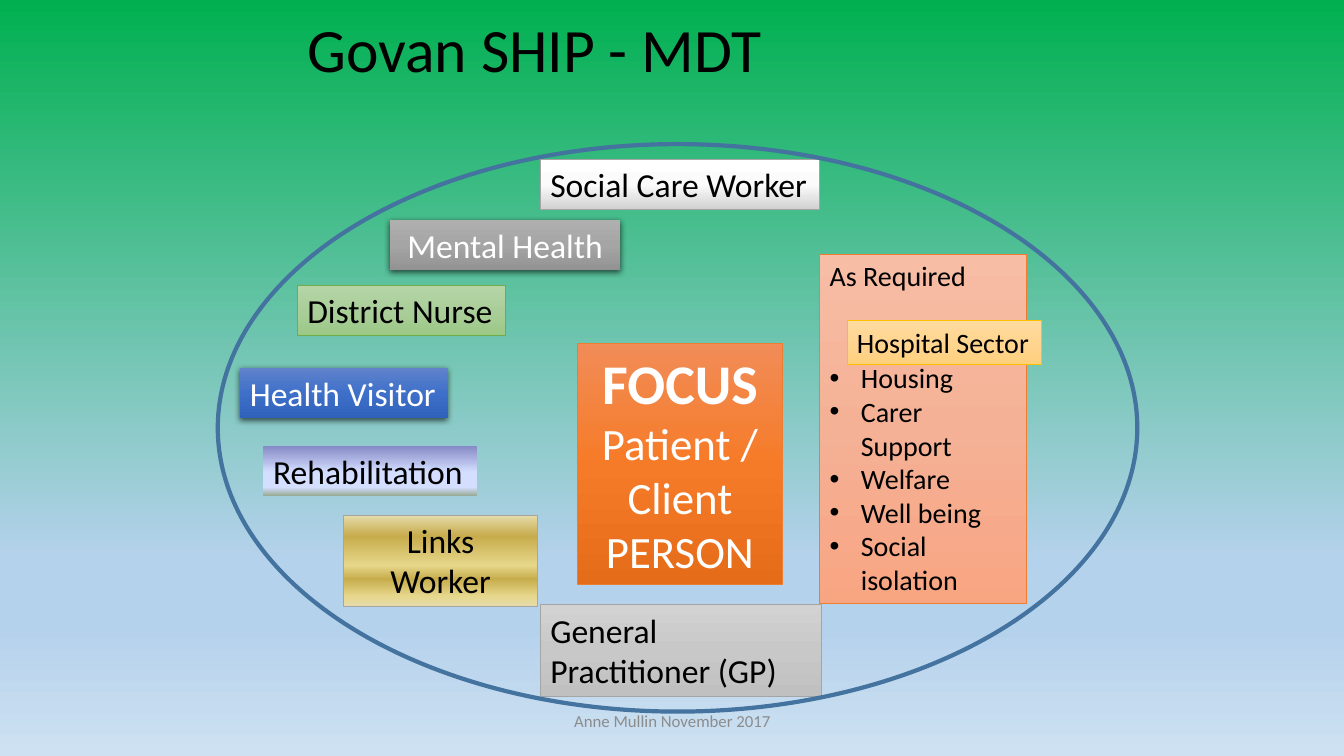
from lxml.etree import SubElement as Sub
from pptx import Presentation
from pptx.dml.color import RGBColor as RGB
from pptx.enum.shapes import MSO_SHAPE as Kind
from pptx.enum.text import MSO_ANCHOR as Anchor, MSO_AUTO_SIZE as Auto, PP_ALIGN as Align
from pptx.oxml.ns import qn
from pptx.util import Inches, Pt


class Theme:
    font = "Calibri"
    black, white, grey = "000000", "FFFFFF", "8C8C8C"
    ring, orange, edge, green, gold = "43739E", "ED7D31", "A5A5A5", "70AD47", "FFC000"
    title, focus, large, role, item, foot = 44, 40, 32, 24, 20, 12
    sky = [(0, "00B050"), (74, "B5D2EC"), (83, "B5D2EC"), (100, "CEE1F2")]
    brass = [(0, "E6DCAC"), (12, "E6D78A"), (30, "C7AC4C"),
             (45, "E6D78A"), (77, "C7AC4C"), (100, "E6DCAC")]
    lilac = [(0, "8488C4"), (53, "D4DEFF"), (83, "D4DEFF"), (100, "96AB94")]


def three(*tones):
    """Place three colours at the start, middle and end of a gradient."""
    return list(zip((0, 50, 100), tones))


def blend(fill, host, stops, angle=90):
    """Fill with a gradient of any number of stops; the angle runs clockwise."""
    fill.gradient()
    grad = host.find(".//" + qn("a:gradFill"))
    chain = grad.find(qn("a:gsLst"))
    for old in list(chain):
        chain.remove(old)
    for place, tone in stops:
        stop = Sub(chain, qn("a:gs"), pos=str(place * 1000))
        Sub(stop, qn("a:srgbClr"), val=tone)
    grad.find(qn("a:lin")).set("ang", str(angle * 60000))


def write(frame, text, size, color=Theme.black, bold=False, align=Align.LEFT,
          first=False, bullet=False, before=0, lines=None):
    """Add one paragraph; first reuses the one that the frame starts with."""
    para = frame.paragraphs[0] if first else frame.add_paragraph()
    para.alignment = align
    if bullet:
        props = para._p.get_or_add_pPr()
        props.set("marL", str(Inches(0.31)))
        props.set("indent", str(-Inches(0.31)))
        Sub(props, qn("a:buFont"), typeface="Arial")
        Sub(props, qn("a:buChar"), char="•")
    if before:
        para.space_before = Pt(before)
    if lines:
        para.line_spacing = lines
    run = para.add_run()
    run.text = text
    font = run.font
    font.name, font.size, font.bold = Theme.font, Pt(size), bold
    font.color.rgb = RGB.from_string(color)


class Board:
    def __init__(self, slide):
        self.slide, self.theme = slide, Theme
        blend(slide.background.fill, slide._element, Theme.sky)

    def label(self, spot, text, size, **style):
        frame = self.slide.shapes.add_textbox(*map(Inches, spot)).text_frame
        frame.word_wrap = True
        frame.vertical_anchor = Anchor.MIDDLE
        write(frame, text, size, first=True, **style)

    def shape(self, kind, spot, line=None, width=0.5):
        shape = self.slide.shapes.add_shape(kind, *map(Inches, spot))
        shape.shadow.inherit = False
        if line:
            shape.line.color.rgb = RGB.from_string(line)
            shape.line.width = Pt(width)
        else:
            shape.line.fill.background()
        return shape

    def ring(self, spot):
        self.shape(Kind.OVAL, spot, self.theme.ring, 3).fill.background()

    def box(self, spot, stops, line=None, angle=90, wrap=True, shade=False):
        """Draw a gradient box and return its text frame."""
        shape = self.shape(Kind.RECTANGLE, spot, line)
        blend(shape.fill, shape._element.spPr, stops, angle)
        if shade:
            self.shade(shape)
        frame = shape.text_frame
        frame.word_wrap = wrap
        frame.auto_size = Auto.SHAPE_TO_FIT_TEXT
        frame.vertical_anchor = Anchor.TOP
        return frame

    def shade(self, shape):
        effects = shape._element.spPr.find(qn("a:effectLst"))
        drop = Sub(effects, qn("a:outerShdw"), blurRad=str(Pt(4.5)), dist=str(Pt(1.5)),
                   dir="5400000", algn="ctr", rotWithShape="0")
        tone = Sub(drop, qn("a:srgbClr"), val=self.theme.black)
        Sub(tone, qn("a:alpha"), val="63000")

    def role(self, text, spot, stops, size=Theme.role, color=Theme.black,
             align=Align.LEFT, **look):
        write(self.box(spot, stops, **look), text, size, color, align=align, first=True)


def main():
    deck = Presentation()
    deck.slide_width, deck.slide_height = Inches(13.33), Inches(7.5)
    board = Board(deck.slides.add_slide(deck.slide_layouts[6]))
    mid, white, edge = Align.CENTER, Theme.white, Theme.edge

    board.label((2.95, 0, 8.72, 1.05), "Govan SHIP - MDT", Theme.title, lines=0.9)

    focus = board.box((5.73, 3.41, 2.03, 2.39),
                      three("F18C57", "F67B28", "E56C19"), Theme.orange)
    write(focus, "FOCUS", Theme.focus, white, bold=True, align=mid, first=True)
    for text in ("Patient / Client", "PERSON"):
        write(focus, text, Theme.large, white, align=mid)

    board.role("General Practitioner (GP)", (5.36, 6, 2.79, 0.91),
               three("D2D2D2", "C8C8C8", "C0C0C0"), line=edge)
    board.role("Social Care Worker", (5.36, 1.58, 2.77, 0.5),
               three("FFFFFF", "FBFBFB", "D1D1D1"), line=edge, wrap=False)
    board.role("District Nurse", (2.95, 2.83, 2.06, 0.5),
               three("B5D5A7", "AACE9A", "9CC987"), line=Theme.green, wrap=False)
    board.role("Health Visitor", (2.38, 3.65, 2.06, 0.5),
               three("6183CB", "3E70CA", "3062BB"), color=white, wrap=False, shade=True)

    extra = board.box((8.13, 2.52, 2.05, 3.47),
                      three("F7BDA5", "F5B196", "F8A582"), Theme.orange)
    write(extra, "As Required", Theme.item, first=True)
    needs = ("Housing", "Carer Support", "Welfare", "Well being", "Social isolation")
    for rank, need in enumerate(needs):
        write(extra, need, Theme.item, bullet=True, before=0 if rank else 48.8)

    board.ring((2.16, 1.43, 9.12, 5.63))
    board.role("Hospital Sector", (8.4, 3.18, 1.93, 0.44),
               three("FFDB9E", "FFD590", "FFD07C"), Theme.item, line=Theme.gold, wrap=False)
    board.role("Mental Health", (3.87, 2.18, 2.28, 0.5),
               three("AFAFAF", "A5A5A5", "939393"), color=white, align=mid, shade=True)
    board.role("Links Worker", (3.41, 5.11, 1.92, 0.91), Theme.brass,
               align=mid, line=edge, angle=270)
    board.role("Rehabilitation", (2.61, 4.42, 2.12, 0.5), Theme.lilac)

    board.label((4.42, 6.95, 4.5, 0.4), "Anne Mullin November 2017", Theme.foot,
                color=Theme.grey, align=mid)
    deck.save("out.pptx")


if __name__ == "__main__":
    main()
